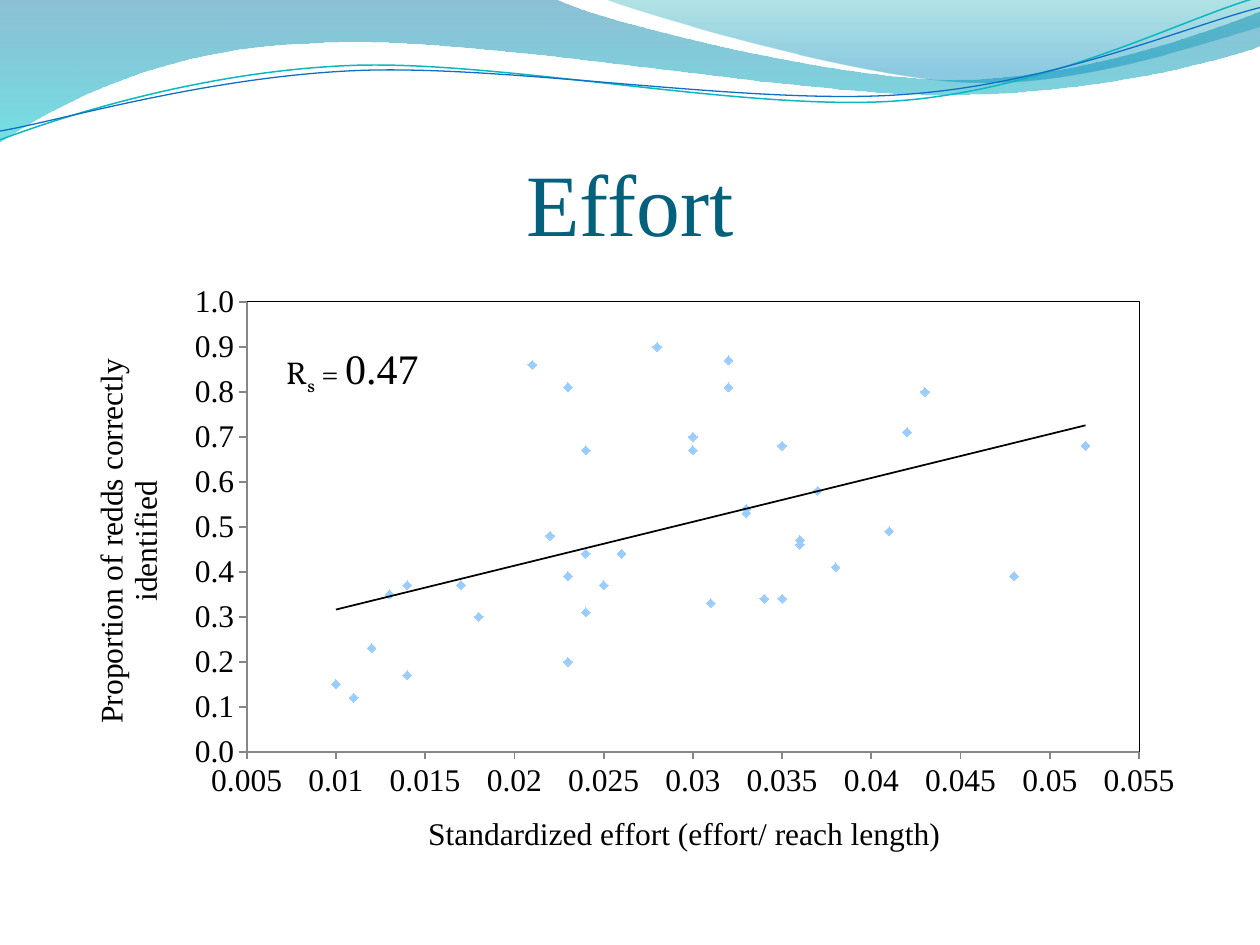
import math

import lxml.etree
import pptx
import pptx.chart.data
import pptx.dml.color
import pptx.enum.chart
import pptx.enum.text
import pptx.oxml
import pptx.oxml.ns
import pptx.util

Inches, Pt = pptx.util.Inches, pptx.util.Pt
qn = pptx.oxml.ns.qn
NAMESPACES = pptx.oxml.ns.nsdecls("a", "c")

SERIF, BODY = "Times New Roman", "Vollkorn"
COLORS = {"title": "04617B", "text": "000000", "axis": "868686", "point": "99CCFF",
          "teal": "0AB8BF", "blue": "0F6FC6"}

# Each wave: start point, then cubic curves (6 numbers) or straight lines (2 numbers).
# Gradient stops hold place, colour and opacity in percent, from top to bottom.
BANDS = [
    {"start": (0, 0),
     "steps": [(4.4, -0.01), (4.76, 0.17, 6.64, 0.63, 7.58, 0.63),
               (8.53, 0.63, 9.58, 0.26, 10, 0.09), (10.01, 0.36),
               (9.83, 0.44, 8.7, 0.76, 7.46, 0.75), (6.22, 0.75, 3.82, 0.28, 2.57, 0.34),
               (1.29, 0.36, 0.46, 0.83, -0.01, 1.13), (0, 0)],
     "stops": [(0, "0074A1", 45), (1, "00C6CF", 55)]},
    {"start": (4.79, -0.01),
     "steps": [(5.09, 0.11, 6.82, 0.62, 7.69, 0.65), (8.56, 0.69, 9.61, 0.32, 10, 0.21),
               (10, 0), (4.79, -0.01)],
     "stops": [(0, "00A1A9", 30), (0.8, "008BBF", 45)]},
]
# Strands are tilted around their centre.
TILT = 357.3
STRANDS = [
    {"start": (0, 1.11), "centre": (4.99, 0.575),
     "steps": [(0.48, 0.93, 1.58, 0.57, 2.77, 0.52), (3.95, 0.47, 5.93, 0.89, 7.13, 0.8),
               (8.33, 0.71, 9.38, 0.15, 9.98, -0.02)],
     "line": ("teal", 0.85)},
    {"start": (0, 1.04), "centre": (4.995, 0.59),
     "steps": [(0.47, 0.96, 1.64, 0.61, 2.83, 0.56), (4.03, 0.51, 5.97, 0.84, 7.17, 0.75),
               (8.36, 0.67, 9.41, 0.21, 10, 0.06)],
     "line": ("blue", 0.75)},
]

EFFORT = [0.038, 0.022, 0.025, 0.033, 0.023, 0.031, 0.034, 0.035, 0.026, 0.024,
          0.013, 0.018, 0.014, 0.012, 0.011, 0.014, 0.017, 0.01, 0.042, 0.043,
          0.037, 0.033, 0.023, 0.036, 0.052, 0.024, 0.036, 0.048, 0.032, 0.023,
          0.028, 0.021, 0.041, 0.035, 0.024, 0.032, 0.03, 0.03]
PROPORTION = [0.41, 0.48, 0.37, 0.53, 0.39, 0.33, 0.34, 0.34, 0.44, 0.44,
              0.35, 0.3, 0.37, 0.23, 0.12, 0.17, 0.37, 0.15, 0.71, 0.8,
              0.58, 0.54, 0.2, 0.46, 0.68, 0.31, 0.47, 0.39, 0.87, 0.81,
              0.9, 0.86, 0.49, 0.68, 0.67, 0.81, 0.7, 0.67]
AXES = {
    "category_axis": {"title": "Standardized effort (effort/ reach length)",
                      "title_at": (0.317, 0.884), "number_format": "General",
                      "scale": {"minimum_scale": 0.005, "maximum_scale": 0.055,
                                "major_unit": 0.005}},
    "value_axis": {"title": "Proportion of redds correctly identified",
                   "title_at": (0.02, 0.132), "number_format": "#,##0.0",
                   "scale": {"minimum_scale": 0, "maximum_scale": 1, "major_unit": 0.1}},
}
# Text, size, font, baseline shift in percent
CORRELATION = [("R", 18, BODY, 0), ("s", 18, BODY, -25), (" = ", 18, BODY, 0),
               ("0.47", 24, SERIF, 0)]


def rgb(value):
    """Turn a hex string into a colour."""
    return pptx.dml.color.RGBColor.from_string(value)


def style(font, size, name=SERIF, color="text"):
    """Set size, typeface and colour of a font."""
    for key, value in {"size": Pt(size), "name": name, "bold": False}.items():
        setattr(font, key, value)
    font.color.rgb = rgb(COLORS[color])


def untilt(point, centre):
    """Turn a point back by the tilt around a centre."""
    angle = math.radians(-TILT)
    x, y = point[0] - centre[0], point[1] - centre[1]
    return (centre[0] + x * math.cos(angle) - y * math.sin(angle),
            centre[1] + x * math.sin(angle) + y * math.cos(angle))


def add_wave(slide, wave):
    """Draw one wave outline with cubic curves and return its shape."""
    points = [wave["start"]]
    for step in wave["steps"]:
        points += zip(step[::2], step[1::2])
    if "centre" in wave:
        points = [untilt(point, wave["centre"]) for point in points]
    points = [(Inches(x), Inches(y)) for x, y in points]
    builder = slide.shapes.build_freeform(*points[0])
    builder.add_line_segments(points[1:], close="stops" in wave)
    shape = builder.convert_to_shape()
    shape.shadow.inherit = False
    segments = iter(list(shape._element.iter(qn("a:lnTo"))))
    for step in wave["steps"]:
        parts = [next(segments) for _ in step[::2]]
        if len(parts) == 3:
            curve = lxml.etree.Element(qn("a:cubicBezTo"))
            parts[0].addprevious(curve)
            for part in parts:
                curve.append(part[0])
                part.getparent().remove(part)
    return shape


def add_band(slide, band):
    """Draw a translucent gradient band."""
    shape = add_wave(slide, band)
    shape.line.fill.background()
    shape.fill.gradient()
    shape.fill.gradient_angle = 270
    for stop, (place, color, _) in zip(shape.fill.gradient_stops, band["stops"]):
        stop.position = place
        stop.color.rgb = rgb(color)
    for tint, (_, _, opacity) in zip(shape._element.spPr.iter(qn("a:srgbClr")), band["stops"]):
        tint.append(pptx.oxml.parse_xml(f'<a:alpha {NAMESPACES} val="{opacity * 1000}"/>'))


def add_strand(slide, strand):
    """Draw a thin tilted curve."""
    shape = add_wave(slide, strand)
    color, width = strand["line"]
    shape.rotation = TILT
    shape.fill.background()
    shape.line.color.rgb = rgb(COLORS[color])
    shape.line.width = Pt(width)


def set_layout(parent, index, target="", **sizes):
    """Give a chart part a manual layout in fractions of the chart."""
    for old in parent.findall(qn("c:layout")):
        parent.remove(old)
    modes = "".join(f'<c:{key}Mode val="edge"/>' for key in sizes if key in "xy")
    values = "".join(f'<c:{key} val="{value}"/>' for key, value in sizes.items())
    parent.insert(index, pptx.oxml.parse_xml(
        f"<c:layout {NAMESPACES}><c:manualLayout>{target}{modes}{values}"
        "</c:manualLayout></c:layout>"))


def outline_xml(width):
    """Return shape properties for a black line without fill."""
    return (f'<c:spPr {NAMESPACES}><a:noFill/><a:ln w="{Pt(width)}"><a:solidFill>'
            f'<a:srgbClr val="{COLORS["text"]}"/></a:solidFill></a:ln></c:spPr>')


def format_axis(axis, spec):
    """Set scale, ticks, labels and title of an axis."""
    settings = {"has_major_gridlines": False, "has_minor_gridlines": False,
                "major_tick_mark": pptx.enum.chart.XL_TICK_MARK.OUTSIDE,
                "minor_tick_mark": pptx.enum.chart.XL_TICK_MARK.NONE,
                "crosses": pptx.enum.chart.XL_AXIS_CROSSES.MINIMUM, **spec["scale"]}
    for key, value in settings.items():
        setattr(axis, key, value)
    axis.tick_labels.number_format = spec["number_format"]
    axis.tick_labels.number_format_is_linked = False
    style(axis.tick_labels.font, 18)
    axis.format.line.color.rgb = rgb(COLORS["axis"])
    axis.format.line.width = Pt(1)
    caption = axis.axis_title.text_frame
    caption.text = spec["title"]
    style(caption.paragraphs[0].runs[0].font, 18)
    left, top = spec["title_at"]
    set_layout(axis.axis_title._element, 1, x=left, y=top)


def add_effort_chart(slide):
    """Add the scatter chart with its linear trend."""
    data = pptx.chart.data.XyChartData()
    redds = data.add_series("Series 1")
    for x, y in zip(EFFORT, PROPORTION):
        redds.add_data_point(x, y)
    chart = slide.shapes.add_chart(
        pptx.enum.chart.XL_CHART_TYPE.XY_SCATTER,
        Inches(0.5), Inches(2.17), Inches(9), Inches(4.8), data).chart
    chart.has_title = chart.has_legend = False
    style(chart.font, 10, BODY)
    for name, spec in AXES.items():
        format_axis(getattr(chart, name), spec)
    chart.plots[0].vary_by_categories = False
    points = chart.plots[0].series[0]
    points.format.line.fill.background()
    points.marker.style = pptx.enum.chart.XL_MARKER_STYLE.DIAMOND
    points.marker.size = 5
    points.marker.format.fill.solid()
    points.marker.format.fill.fore_color.rgb = rgb(COLORS["point"])
    points.marker.format.line.fill.background()
    points._element.find(qn("c:xVal")).addprevious(pptx.oxml.parse_xml(
        f'<c:trendline {NAMESPACES}>{outline_xml(1)}<c:trendlineType val="linear"/>'
        '<c:dispRSqr val="0"/><c:dispEq val="0"/></c:trendline>'))
    plot_area = chart._chartSpace.chart.plotArea
    set_layout(plot_area, 0, '<c:layoutTarget val="inner"/>', x=0.162, y=0.047, w=0.787, h=0.744)
    plot_area.append(pptx.oxml.parse_xml(outline_xml(0.5)))


def add_correlation(slide):
    """Add the rank correlation label."""
    frame = slide.shapes.add_textbox(Inches(2.17), Inches(2.67), Inches(1.31), Inches(0.5)).text_frame
    frame.word_wrap = False
    frame.auto_size = pptx.enum.text.MSO_AUTO_SIZE.SHAPE_TO_FIT_TEXT
    for text, size, name, shift in CORRELATION:
        run = frame.paragraphs[0].add_run()
        run.text = text
        style(run.font, size, name)
        if shift:
            run.font._element.set("baseline", str(shift * 1000))


def set_title(slide, text):
    """Place and format the slide title in front of the waves."""
    title = slide.shapes.title
    title._element.getparent().append(title._element)
    box = {"left": 0.5, "top": 0.77, "width": 9, "height": 1.25}
    margins = {"margin_left": 0, "margin_top": 0.05, "margin_right": 0, "margin_bottom": 0}
    for part, lengths in ((title, box), (title.text_frame, margins)):
        for key, value in lengths.items():
            setattr(part, key, Inches(value))
    title.text_frame.text = text
    title.text_frame.vertical_anchor = pptx.enum.text.MSO_ANCHOR.BOTTOM
    heading = title.text_frame.paragraphs[0]
    heading.alignment = pptx.enum.text.PP_ALIGN.CENTER
    style(heading.runs[0].font, 50, SERIF, "title")


deck = pptx.Presentation()
deck.slide_width, deck.slide_height = Inches(10), Inches(7.5)
effort = deck.slides.add_slide(deck.slide_layouts[5])
for band in BANDS:
    add_band(effort, band)
for strand in STRANDS:
    add_strand(effort, strand)
set_title(effort, "Effort")
add_effort_chart(effort)
add_correlation(effort)
deck.save("out.pptx")
